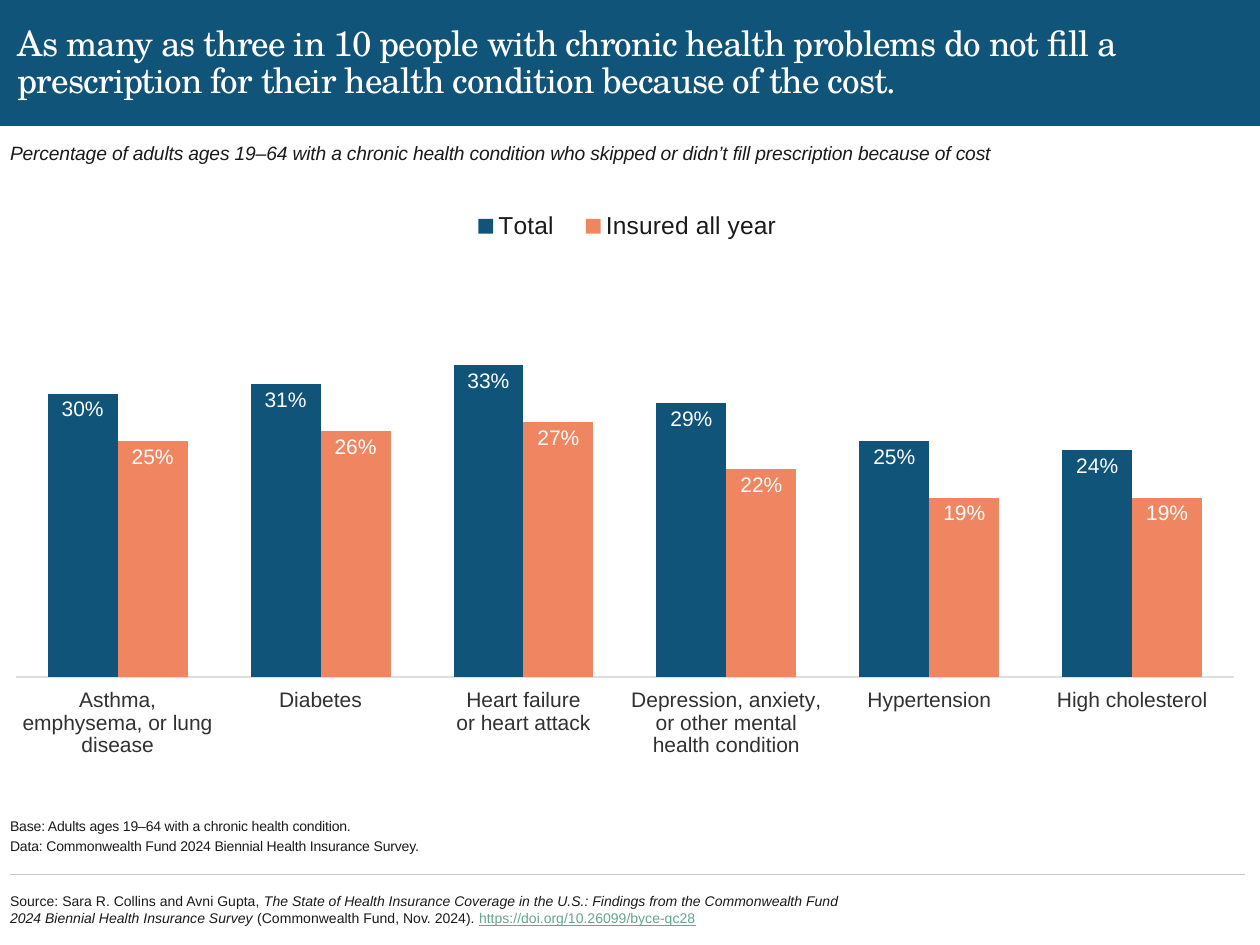
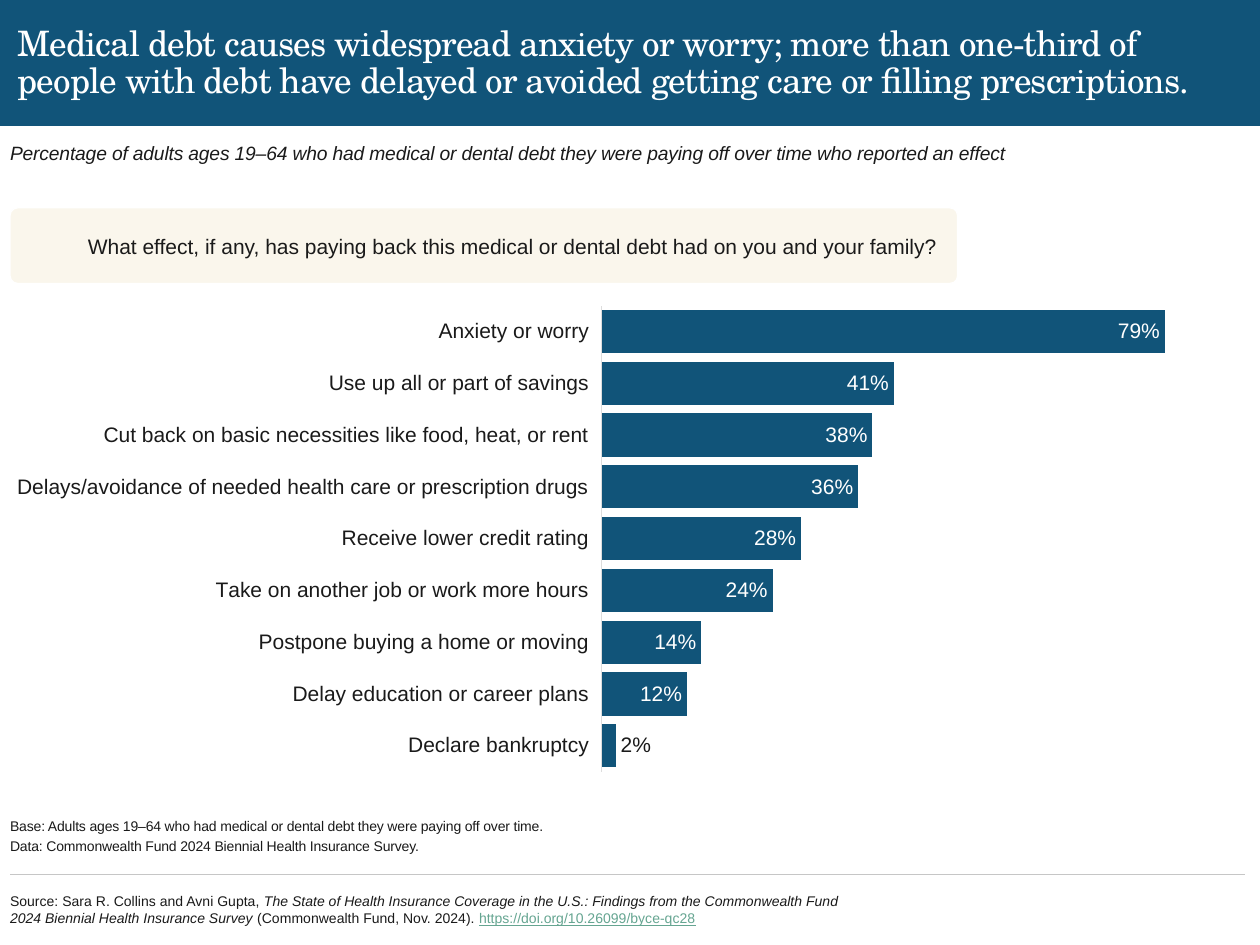
from lxml.etree import SubElement
from pptx import Presentation
from pptx.chart.data import CategoryChartData
from pptx.dml.color import RGBColor
from pptx.enum.chart import XL_CHART_TYPE as ChartType
from pptx.enum.chart import XL_LABEL_POSITION as LabelPosition
from pptx.enum.chart import XL_LEGEND_POSITION as LegendPosition
from pptx.enum.chart import XL_TICK_LABEL_POSITION as TickLabels
from pptx.enum.chart import XL_TICK_MARK as TickMark
from pptx.enum.shapes import MSO_CONNECTOR, MSO_SHAPE
from pptx.enum.text import MSO_ANCHOR as Anchor
from pptx.enum.text import MSO_AUTO_SIZE as AutoSize
from pptx.enum.text import PP_ALIGN as Align
from pptx.oxml import parse_xml
from pptx.oxml.ns import nsdecls, qn
from pptx.util import Inches, Pt

NAVY, CORAL, GOLD, GREEN = "115479", "F08661", "D3AC4C", "65A591"
INK, SOFT_INK, WHITE, RULE, AXIS = "1A1A1A", "313131", "FFFFFF", "C6C6C6", "DDDDDD"
BODY_FONT, TITLE_FONT = "Arial", "TeX Gyre Schola"
LEFT, WIDTH = 0.08, 9.8

SURVEY = "Data: Commonwealth Fund 2024 Biennial Health Insurance Survey."
SOURCE_LINES = [
    [("Source: Sara R. Collins and Avni Gupta, ", False, False),
     ("The State of Health Insurance Coverage in the U.S.: Findings from the Commonwealth Fund ",
      True, False)],
    [("2024 Biennial Health Insurance Survey", True, False),
     (" (Commonwealth Fund, Nov. 2024). ", False, False),
     ("https://doi.org/10.26099/byce-qc28", False, True)],
]

CONDITIONS = ["Asthma, emphysema, or lung disease", "Diabetes", "Heart failure\nor heart attack",
              "Depression, anxiety, or other mental health condition", "Hypertension",
              "High cholesterol"]
SKIPPED = [("Total", NAVY, [0.30, 0.31, 0.33, 0.29, 0.25, 0.24]),
           ("Insured all year", CORAL, [0.25, 0.26, 0.27, 0.22, 0.19, 0.19])]
DEBT_EFFECTS = {
    "Declare bankruptcy": 0.02,
    "Delay education or career plans": 0.12,
    "Postpone buying a home or moving": 0.14,
    "Take on another job or work more hours": 0.24,
    "Receive lower credit rating": 0.28,
    "Delays/avoidance of needed health care or prescription drugs": 0.36,
    "Cut back on basic necessities like food, heat, or rent": 0.38,
    "Use up all or part of savings": 0.41,
    "Anxiety or worry": 0.79,
}


def rgb(color):
    """Turn a hex string into a colour."""
    return RGBColor.from_string(color)


def style_font(font, size, color=INK, name=BODY_FONT, italic=None):
    """Set the face, size, colour and slant of a font."""
    font.name, font.size, font.italic = name, Pt(size), italic
    font.color.rgb = rgb(color)


def set_frame(frame, anchor, insets=(0, 0, 0, 0)):
    """Wrap a text frame and set its anchor and insets."""
    frame.word_wrap, frame.auto_size, frame.vertical_anchor = True, AutoSize.NONE, anchor
    (frame.margin_left, frame.margin_top,
     frame.margin_right, frame.margin_bottom) = map(Inches, insets)


def write(frame, lines, size, spacing, **look):
    """Fill a frame with left-aligned paragraphs of one style."""
    frame.text = "\n".join(lines)
    for index, paragraph in enumerate(frame.paragraphs):
        paragraph.alignment = Align.LEFT
        paragraph.space_before = Pt(0.2 * size if index else 0)
        for run in paragraph.runs:
            style_font(run.font, size, **look)
            if spacing:
                run._r.get_or_add_rPr().set("spc", str(spacing))


def add_text(slide, box, lines, size, anchor, spacing=-10, **look):
    """Add a text box without insets."""
    frame = slide.shapes.add_textbox(*map(Inches, box)).text_frame
    set_frame(frame, anchor)
    write(frame, lines, size, spacing, **look)


def add_panel(slide, preset, box, fill):
    """Add a filled shape without line or shadow."""
    panel = slide.shapes.add_shape(preset, *map(Inches, box))
    panel.shadow.inherit = False
    panel.fill.solid()
    panel.fill.fore_color.rgb = rgb(fill)
    panel.line.fill.background()
    return panel


def add_header(slide, headline):
    """Place the headline over the band at the top."""
    title = slide.shapes.title
    band = add_panel(slide, MSO_SHAPE.RECTANGLE, (0, 0, 10, 1), NAVY)
    title.element.addprevious(band.element)
    title.left, title.top, title.width, title.height = map(Inches, (0.14, 0.05, 9.7, 0.91))
    set_frame(title.text_frame, Anchor.MIDDLE)
    write(title.text_frame, [headline], 20, -50, color=WHITE, name=TITLE_FONT)
    title.text_frame.paragraphs[0].line_spacing = 0.9


def add_footer(slide, base):
    """Place the notes, the rule and the source line."""
    add_text(slide, (LEFT, 6.28, WIDTH, 0.5), [base, SURVEY], 8, Anchor.BOTTOM)
    rule = slide.shapes.add_connector(
        MSO_CONNECTOR.STRAIGHT, *map(Inches, (LEFT + WIDTH, 6.94, LEFT, 6.94)))
    rule.line.color.rgb, rule.line.width = rgb(RULE), Pt(0.75)
    SubElement(rule.element.spPr, qn("a:effectLst"))
    source = slide.shapes.add_textbox(*map(Inches, (LEFT, 6.99, 6.76, 0.46))).text_frame
    set_frame(source, Anchor.MIDDLE)
    citation = source.paragraphs[0]
    for index, line in enumerate(SOURCE_LINES):
        if index:
            citation.add_line_break()
        for words, italic, is_address in line:
            run = citation.add_run()
            run.text = words
            style_font(run.font, 8, GREEN if is_address else INK, italic=italic)
            run.font.underline = is_address


def add_survey_slide(deck, headline, measure, base):
    """Add a slide with the header, subtitle and footer."""
    slide = deck.slides.add_slide(deck.slide_layouts[5])
    add_header(slide, headline)
    add_text(slide, (LEFT, 1.08, WIDTH, 0.27), [measure], 11, Anchor.MIDDLE, italic=True)
    add_footer(slide, base)
    return slide


def set_layout(parent, index, box, inner=False):
    """Fix the place of a chart part as fractions of the chart."""
    for old in parent.findall(qn("c:layout")):
        parent.remove(old)
    target = '<c:layoutTarget val="inner"/>' if inner else ""
    modes = "".join(f'<c:{axis}Mode val="edge"/>' for axis in "xy")
    sizes = "".join(f'<c:{key} val="{value}"/>' for key, value in zip("xywh", box))
    parent.insert(index, parse_xml(
        f'<c:layout {nsdecls("c")}><c:manualLayout>{target}{modes}{sizes}'
        "</c:manualLayout></c:layout>"))


def add_percent_chart(slide, kind, box, categories, series, top_value, gap, plot_box, axis_ink):
    """Add a bar or column chart with percent labels inside the bars."""
    data = CategoryChartData(number_format="0%")
    data.categories = categories
    for name, _, values in series:
        data.add_series(name, values)
    chart = slide.shapes.add_chart(kind, *map(Inches, box), data).chart
    chart.has_title = chart.has_legend = False
    style_font(chart.font, 10)
    set_layout(chart.element.find(".//" + qn("c:plotArea")), 0, plot_box, inner=True)

    scale = chart.value_axis
    scale.visible = scale.has_major_gridlines = False
    scale.minimum_scale, scale.maximum_scale = 0, top_value
    names = chart.category_axis
    names.has_major_gridlines = False
    names.major_tick_mark = names.minor_tick_mark = TickMark.NONE
    names.tick_label_position = TickLabels.LOW
    names.format.line.color.rgb, names.format.line.width = rgb(AXIS), Pt(0.75)
    style_font(names.tick_labels.font, 12, axis_ink)

    plot = chart.plots[0]
    plot.gap_width, plot.overlap, plot.vary_by_categories = gap, 0, False
    for bars, (_, color, _) in zip(plot.series, series):
        bars.format.fill.solid()
        bars.format.fill.fore_color.rgb = rgb(color)
        labels = bars.data_labels
        labels.show_value, labels.position = True, LabelPosition.INSIDE_END
        labels.number_format, labels.number_format_is_linked = "0%", False
        style_font(labels.font, 12, WHITE)
    return chart


def add_legend(chart, box):
    """Show the legend above the columns."""
    chart.has_legend = True
    chart.legend.position = LegendPosition.TOP
    chart.legend.include_in_layout = False
    style_font(chart.legend.font, 14)
    set_layout(chart.element.find(".//" + qn("c:legend")), 1, box)


def add_question(slide, box, question):
    """Place the survey question on a pale rounded panel."""
    panel = add_panel(slide, MSO_SHAPE.ROUNDED_RECTANGLE, box, GOLD)
    panel.adjustments[0] = 0.1
    panel.line.color.rgb, panel.line.width = rgb(WHITE), Pt(0.75)
    tint = panel.element.spPr.find(qn("a:solidFill")).find(qn("a:srgbClr"))
    SubElement(tint, qn("a:alpha")).set("val", "10000")
    set_frame(panel.text_frame, Anchor.MIDDLE, (0.6, 0.06, 0.1, 0.06))
    write(panel.text_frame, [question], 12, 0)


def build_prescriptions(deck):
    """Build the slide on skipped prescriptions."""
    slide = add_survey_slide(
        deck,
        "As many as three in 10 people with chronic health problems do not fill a "
        "prescription for their health condition because of the cost.",
        "Percentage of adults ages 19–64 with a chronic health condition who skipped "
        "or didn’t fill prescription because of cost",
        "Base: Adults ages 19–64 with a chronic health condition.")
    chart = add_percent_chart(
        slide, ChartType.COLUMN_CLUSTERED, (LEFT, 1.47, WIDTH, 4.66), CONDITIONS, SKIPPED,
        0.5, 90, (0.005, 0.033, 0.986, 0.805), SOFT_INK)
    add_legend(chart, (0.36, 0.03, 0.28, 0.08))


def build_medical_debt(deck):
    """Build the slide on the effects of medical debt."""
    slide = add_survey_slide(
        deck,
        "Medical debt causes widespread anxiety or worry; more than one-third of people "
        "with debt have delayed or avoided getting care or filling prescriptions.",
        "Percentage of adults ages 19–64 who had medical or dental debt they were paying "
        "off over time who reported an effect",
        "Base: Adults ages 19–64 who had medical or dental debt they were paying off over time.")
    chart = add_percent_chart(
        slide, ChartType.BAR_CLUSTERED, (LEFT, 2.42, WIDTH, 3.71), list(DEBT_EFFECTS),
        [("Series 1", NAVY, list(DEBT_EFFECTS.values()))],
        0.85, 20, (0.479, 0, 0.491, 1), INK)
    bankruptcy = chart.plots[0].series[0].points[0].data_label
    style_font(bankruptcy.font, 12)
    bankruptcy.position = LabelPosition.OUTSIDE_END
    add_question(slide, (LEFT, 1.65, 7.52, 0.6),
                 "What effect, if any, has paying back this medical or dental debt had "
                 "on you and your family?")


def main():
    """Build and save the deck."""
    deck = Presentation()
    deck.slide_width, deck.slide_height = Inches(10), Inches(7.5)
    build_prescriptions(deck)
    build_medical_debt(deck)
    deck.save("out.pptx")


if __name__ == "__main__":
    main()
